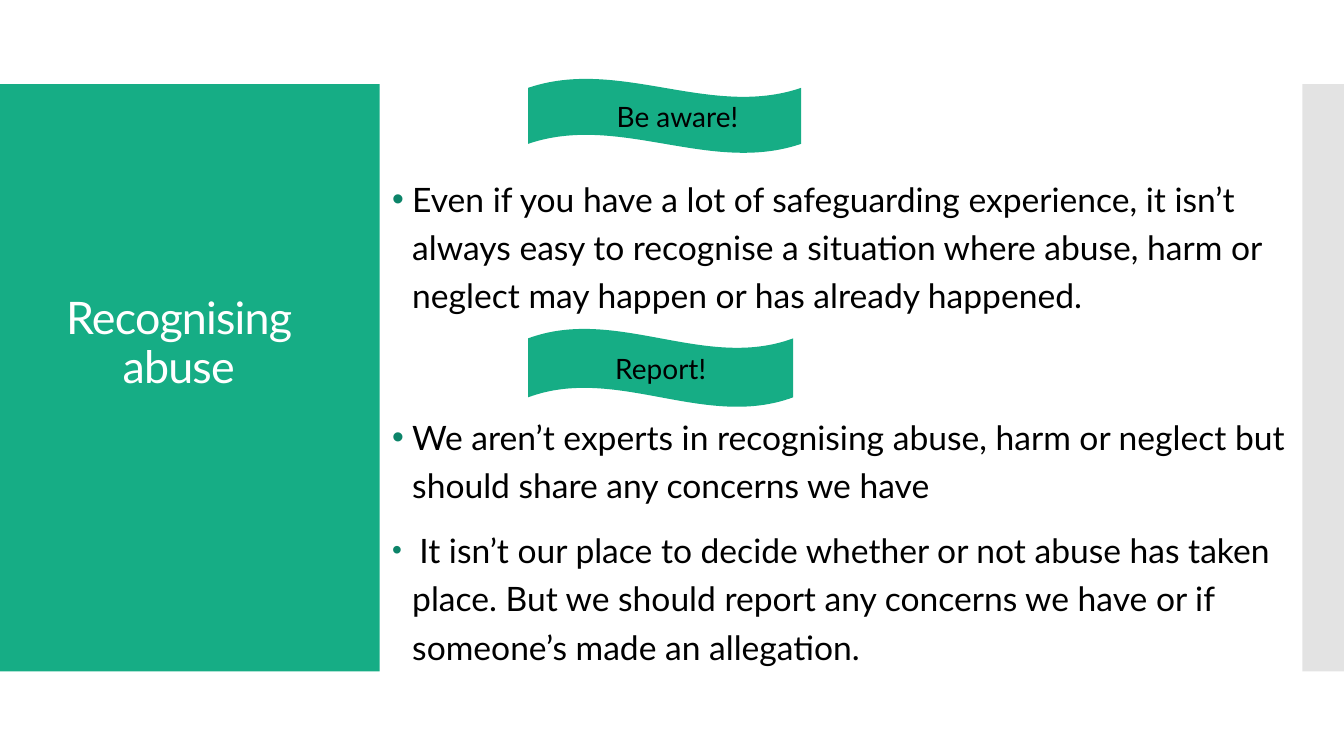
import pptx
import pptx.dml.color
import pptx.enum.shapes
import pptx.enum.text
import pptx.oxml
import pptx.oxml.ns
import pptx.util
from dataclasses import dataclass

Cm = pptx.util.Cm
Pt = pptx.util.Pt
Shape = pptx.enum.shapes.MSO_SHAPE
Align = pptx.enum.text.PP_ALIGN
Middle = pptx.enum.text.MSO_ANCHOR.MIDDLE
Colour = pptx.dml.color.RGBColor.from_string
NS = pptx.oxml.ns.nsdecls("a")


@dataclass
class Theme:
    font: str = "Lato"
    green: str = "16AD85"
    bullet: str = "0C8469"
    grey: str = "C8C8C8"
    ink: str = "000000"
    white: str = "FFFFFF"
    title: int = 32
    body: int = 24
    label: int = 20


class Page:
    def __init__(self, slide, theme):
        self.slide = slide
        self.theme = theme

    def style(self, run, size, colour):
        run.font.name = self.theme.font
        run.font.size = Pt(size)
        run.font.color.rgb = Colour(colour)

    def shape(self, kind, box, fill, alpha=None):
        item = self.slide.shapes.add_shape(kind, *map(Cm, box))
        item.shadow.inherit = False
        item.fill.solid()
        item.fill.fore_color.rgb = Colour(fill)
        item.line.fill.background()
        if alpha:
            tint = item.fill._xPr.find(".//" + pptx.oxml.ns.qn("a:srgbClr"))
            tint.append(pptx.oxml.parse_xml(f'<a:alpha {NS} val="{alpha * 1000}"/>'))
        return item

    def wave(self, box, text, indent=None):
        frame = self.shape(Shape.WAVE, box, self.theme.green).text_frame
        frame.text = text
        frame.vertical_anchor = Middle
        para = frame.paragraphs[0]
        para.alignment = Align.CENTER if indent is None else Align.LEFT
        if indent is not None:
            para._p.get_or_add_pPr().set("marL", str(Cm(indent)))
        self.style(para.runs[0], self.theme.label, self.theme.ink)

    def frame(self, box):
        frame = self.slide.shapes.add_textbox(*map(Cm, box)).text_frame
        frame.word_wrap = True
        frame.vertical_anchor = Middle
        return frame

    def title(self, box, text):
        frame = self.frame(box)
        frame.text = text
        para = frame.paragraphs[0]
        para.alignment = Align.CENTER
        para.line_spacing = 0.9
        run = para.runs[0]
        self.style(run, self.theme.title, self.theme.white)
        run.font._rPr.set("spc", "-60")

    def bullets(self, box, items):
        """Each item lists its runs as (text, size)."""
        frame = self.frame(box)
        for i, parts in enumerate(items):
            para = frame.add_paragraph() if i else frame.paragraphs[0]
            para.line_spacing = 1.2
            para.space_before = Pt(12)
            prop = para._p.get_or_add_pPr()
            prop.set("marL", str(Cm(0.51)))
            prop.set("indent", str(Cm(-0.51)))
            for xml in (
                f'<a:buClr {NS}><a:srgbClr val="{self.theme.bullet}"/></a:buClr>',
                f'<a:buFont {NS} typeface="Arial"/>',
                f'<a:buChar {NS} char="•"/>',
            ):
                prop.append(pptx.oxml.parse_xml(xml))
            for text, size in parts:
                run = para.add_run()
                run.text = text
                self.style(run, size, self.theme.ink)


def main():
    deck = pptx.Presentation()
    deck.slide_width = Cm(33.87)
    deck.slide_height = Cm(19.05)
    theme = Theme()
    page = Page(deck.slides.add_slide(deck.slide_layouts[6]), theme)

    # Side panels
    page.shape(Shape.RECTANGLE, (0, 2.12, 9.57, 14.8), theme.green)
    page.shape(Shape.RECTANGLE, (32.82, 2.12, 1.05, 14.8), theme.grey, alpha=50)
    page.title((0.43, 7.09, 8.15, 3.18), "Recognising abuse")

    # Be aware
    page.wave((13.31, 1.98, 6.88, 1.88), "Be aware!", indent=1.98)
    page.bullets((9.63, 4.22, 23.34, 3.81), [
        [("Even if you have a lot of safeguarding experience, it isn’t always easy to "
          "recognise a situation where abuse, harm or neglect may happen or has "
          "already happened.", theme.body)],
    ])

    # Report
    page.wave((13.31, 8.28, 6.68, 1.98), "Report!")
    page.bullets((9.63, 10.11, 23.34, 6.88), [
        [("We aren’t experts in recognising abuse, harm or neglect but should share "
          "any concerns we have", theme.body)],
        [(" ", theme.label),
         ("It isn’t our place to decide whether or not abuse has taken place. But we "
          "should report any concerns we have or if someone’s made an allegation.",
          theme.body)],
    ])

    deck.save("out.pptx")


if __name__ == "__main__":
    main()
